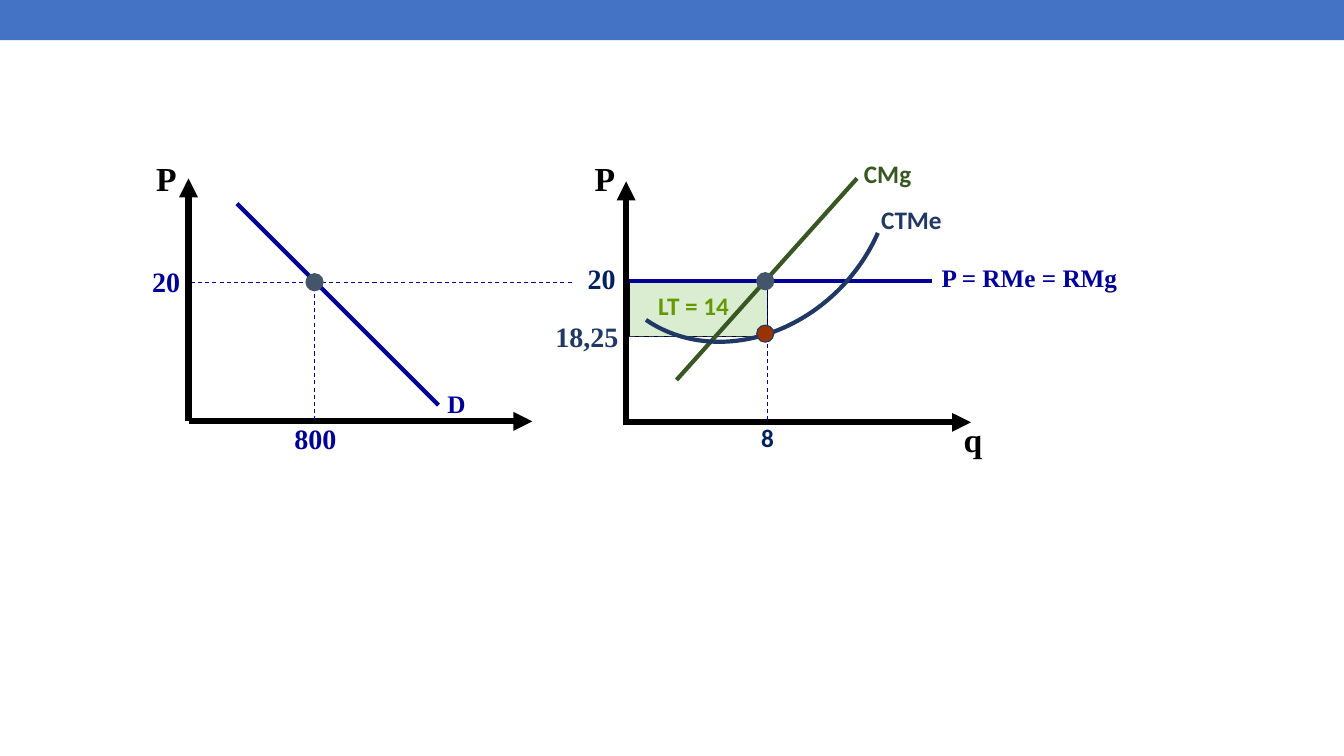
from lxml.etree import SubElement
from pptx import Presentation
from pptx.dml.color import RGBColor
from pptx.enum.dml import MSO_LINE
from pptx.enum.shapes import MSO_CONNECTOR, MSO_SHAPE
from pptx.oxml.ns import qn
from pptx.util import Inches, Pt

SLIDE_W, SLIDE_H = 13.33, 7.5
BLACK, BLUE, NAVY, DARK_NAVY = "000000", "000099", "203864", "002060"
GREEN, LIME, SLATE, RUST = "385723", "669900", "44546A", "993300"
SERIF, SANS = "Times New Roman", "Calibri"

# Every position is in inches right of and above the origin of its graph.
MARKET = {
    "origin": (1.87, 4.18),
    # start, end, colour, width, dashed, arrow
    "lines": [
        ((0, 0), (0, 2.41), BLACK, 4.5, False, True),
        ((0, 0), (3.41, 0), BLACK, 4.5, False, True),
        ((0.48, 2.16), (2.48, 0.16), BLUE, 3, False, False),
        ((1.28, 1.38), (0.03, 1.38), BLUE, 0.75, True, False),
        ((1.25, 1.41), (1.25, 0), BLUE, 0.75, True, False),
        ((3.8, 1.38), (1.28, 1.38), BLUE, 0.75, True, False),
    ],
    # centre, fill, outline
    "points": [((1.25, 1.38), SLATE, SLATE)],
    # text, left and top, width, size, font, colour
    "labels": [
        ("P", (-0.42, 2.66), 0.58, 24, SERIF, BLACK),
        ("20", (-0.46, 1.61), 0.5, 20, SERIF, BLUE),
        ("800", (0.95, 0.05), 0.75, 20, SERIF, BLUE),
        ("D", (2.47, 0.38), 0.83, 18, SERIF, BLUE),
    ],
}
FIRM = {
    "origin": (6.21, 4.19),
    "lines": [
        ((0.03, 1.4), (3.03, 1.4), BLUE, 3, False, False),
        ((0, -0.03), (0, 2.39), BLACK, 4.5, False, True),
        ((0, 0), (3.42, 0), BLACK, 4.5, False, True),
        ((0.5, 0.42), (2.29, 2.42), GREEN, 3, False, False),
        ((1.4, 1.42), (1.4, 0), BLUE, 0.75, True, False),
        ((0.03, 0.85), (1.4, 0.85), NAVY, 1, True, False),
    ],
    "points": [((1.38, 1.4), SLATE, SLATE), ((1.38, 0.88), RUST, NAVY)],
    "labels": [
        ("LT = 14", (0.22, 1.36), 1.08, 18, SANS, LIME),
        ("P", (-0.41, 2.67), 0.58, 24, SERIF, BLACK),
        ("q", (3.25, 0.08), 0.83, 24, SERIF, BLACK),
        ("20", (-0.48, 1.65), 0.5, 20, SERIF, DARK_NAVY),
        ("18,25", (-0.8, 1.07), 0.96, 20, SERIF, NAVY),
        ("8", (1.24, 0.05), 1.13, 18, SANS, DARK_NAVY),
        ("CMg", (2.26, 2.67), 0.74, 18, SANS, GREEN),
        ("CTMe", (2.43, 2.21), 0.99, 18, SANS, NAVY),
        ("P = RMe = RMg", (3.03, 1.64), 2.17, 18, SERIF, BLUE),
    ],
}
PROFIT = {"left_top": (0.03, 1.4), "size": (1.37, 0.55), "fill": "DAEDD1"}
AVERAGE_COST = {"left_top": (-0.45, 3.67), "size": (3.21, 2.74),
                "rotation": 132.9, "angles": (146.7, 212.32)}
POINT_SIZE = 0.17

prs = Presentation()
prs.slide_width, prs.slide_height = Inches(SLIDE_W), Inches(SLIDE_H)
shapes = prs.slides.add_slide(prs.slide_layouts[6]).shapes


def rgb(color):
    return RGBColor.from_string(color)


def place(graph, point):
    """Turn a point of a graph into a position on the slide."""
    (x0, y0), (x, y) = graph["origin"], point
    return Inches(x0 + x), Inches(y0 - y)


def add_shape(kind, left_top, size, fill=None, line=None, width=1):
    sp = shapes.add_shape(kind, *left_top, *map(Inches, size))
    sp.shadow.inherit = False
    if fill:
        sp.fill.solid()
        sp.fill.fore_color.rgb = rgb(fill)
    else:
        sp.fill.background()
    if line:
        sp.line.color.rgb = rgb(line)
        sp.line.width = Pt(width)
    else:
        sp.line.fill.background()
    return sp


def add_line(graph, start, end, color, width, dashed, arrow):
    cx = shapes.add_connector(MSO_CONNECTOR.STRAIGHT,
                              *place(graph, start), *place(graph, end))
    cx.line.color.rgb = rgb(color)
    cx.line.width = Pt(width)
    if dashed:
        cx.line.dash_style = MSO_LINE.DASH
    if arrow:
        SubElement(cx.line._get_or_add_ln(), qn("a:tailEnd"), type="triangle")
    SubElement(cx._element.spPr, qn("a:effectLst"))


def add_label(graph, text, left_top, width, size, font, color):
    height = 0.1 + size / 60
    tf = shapes.add_textbox(*place(graph, left_top),
                            Inches(width), Inches(height)).text_frame
    tf.word_wrap = True
    p = tf.paragraphs[0]
    p.text = text
    p.font.name, p.font.size, p.font.bold = font, Pt(size), True
    p.font.color.rgb = rgb(color)


def add_point(graph, center, fill, line):
    x, y = center
    corner = place(graph, (x - POINT_SIZE / 2, y + POINT_SIZE / 2))
    add_shape(MSO_SHAPE.OVAL, corner, (POINT_SIZE, POINT_SIZE), fill, line, 0.75)


def add_average_cost():
    arc = add_shape(MSO_SHAPE.ARC, place(FIRM, AVERAGE_COST["left_top"]),
                    AVERAGE_COST["size"], line=NAVY, width=3)
    arc.rotation = AVERAGE_COST["rotation"]
    for i, angle in enumerate(AVERAGE_COST["angles"]):
        arc.adjustments[i] = angle


add_shape(MSO_SHAPE.RECTANGLE, (0, 0), (SLIDE_W, 0.4), "4472C4")
add_shape(MSO_SHAPE.RECTANGLE, place(FIRM, PROFIT["left_top"]),
          PROFIT["size"], PROFIT["fill"], BLACK)
for graph in (FIRM, MARKET):
    for label in graph["labels"]:
        add_label(graph, *label)
    for line in graph["lines"]:
        add_line(graph, *line)
    if graph is FIRM:
        add_average_cost()
    for point in graph["points"]:
        add_point(graph, *point)

prs.save("out.pptx")
